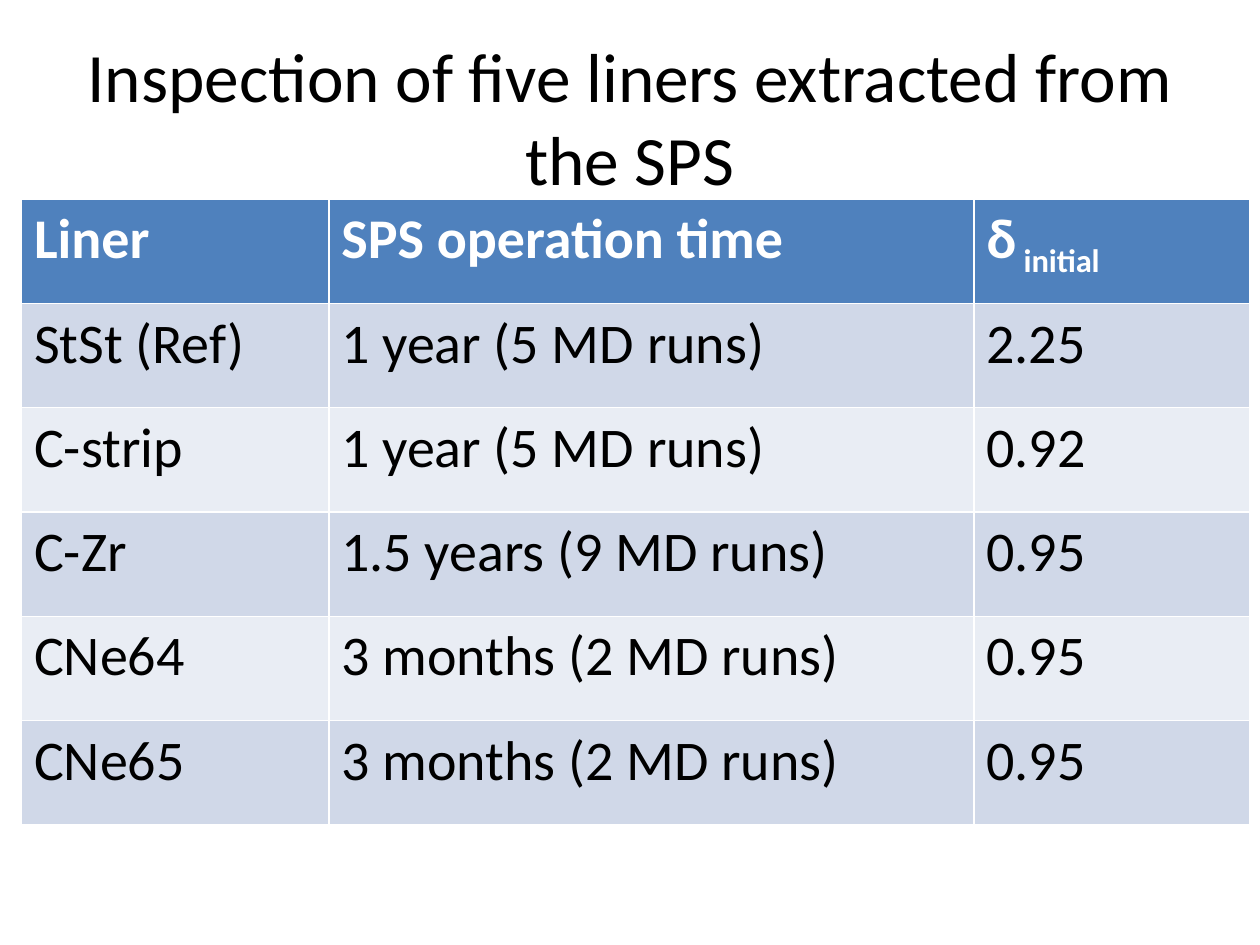
from pptx import Presentation
from pptx.dml.color import RGBColor
from pptx.enum.text import MSO_ANCHOR, MSO_AUTO_SIZE, PP_ALIGN
from pptx.util import Inches, Pt

TITLE = "Inspection of five liners extracted from the SPS"
HEADER = ["Liner", "SPS operation time", "δ"]
HEADER_SUBSCRIPT = " initial"
LINERS = [
    ["StSt (Ref)", "1 year (5 MD runs)", "2.25"],
    ["C-strip", "1 year (5 MD runs)", "0.92"],
    ["C-Zr", "1.5 years (9 MD runs)", "0.95"],
    ["CNe64", "3 months (2 MD runs)", "0.95"],
    ["CNe65", "3 months (2 MD runs)", "0.95"],
]
COLUMN_WIDTHS = [2.44, 5.12, 2.19]
HEADER_FILL = "4F81BD"
BAND_FILLS = ["D0D8E8", "E9EDF4"]
TITLE_FONT = {"name": "Calibri", "size": Pt(39.6), "bold": False}
HEADER_FONT = {"name": "Calibri", "size": Pt(32), "bold": True}
BODY_FONT = {"name": "Calibri", "size": Pt(32), "bold": False}


def color(hex_value):
    return RGBColor.from_string(hex_value)


def add_text(paragraph, text, font_values, hex_value):
    run = paragraph.add_run()
    run.text = text
    for name, value in font_values.items():
        setattr(run.font, name, value)
    run.font.color.rgb = color(hex_value)
    return run


def place_title(slide, left, top, width, height):
    title = slide.shapes.title
    box = {"left": left, "top": top, "width": width, "height": height}
    for name, value in box.items():
        setattr(title, name, Inches(value))
    frame = title.text_frame
    frame.auto_size = MSO_AUTO_SIZE.NONE
    frame.vertical_anchor = MSO_ANCHOR.MIDDLE
    paragraph = frame.paragraphs[0]
    paragraph.alignment = PP_ALIGN.CENTER
    add_text(paragraph, TITLE, TITLE_FONT, "000000")


def fill_row(table, row_index, texts, fill, font_values, text_color):
    for column_index, text in enumerate(texts):
        cell = table.cell(row_index, column_index)
        cell.fill.solid()
        cell.fill.fore_color.rgb = color(fill)
        add_text(cell.text_frame.paragraphs[0], text, font_values, text_color)


def add_liner_table(slide, left, top, width, height):
    row_count = len(LINERS) + 1
    frame = slide.shapes.add_table(
        row_count, len(HEADER), Inches(left), Inches(top), Inches(width), Inches(height)
    )
    table = frame.table
    for column, column_width in zip(table.columns, COLUMN_WIDTHS):
        column.width = Inches(column_width)

    fill_row(table, 0, HEADER, HEADER_FILL, HEADER_FONT, "FFFFFF")
    last_header = table.cell(0, len(HEADER) - 1).text_frame.paragraphs[0]
    subscript = add_text(last_header, HEADER_SUBSCRIPT, HEADER_FONT, "FFFFFF")
    subscript.font._element.set("baseline", "-25000")

    for index, liner in enumerate(LINERS):
        band_fill = BAND_FILLS[index % len(BAND_FILLS)]
        fill_row(table, index + 1, liner, band_fill, BODY_FONT, "000000")


def main():
    presentation = Presentation()
    presentation.slide_width = Inches(10)
    presentation.slide_height = Inches(7.5)
    slide = presentation.slides.add_slide(presentation.slide_layouts[5])
    place_title(slide, 0.5, 0.3, 9, 1.25)
    add_liner_table(slide, 0.17, 1.58, sum(COLUMN_WIDTHS), 4.97)
    presentation.save("out.pptx")


if __name__ == "__main__":
    main()
